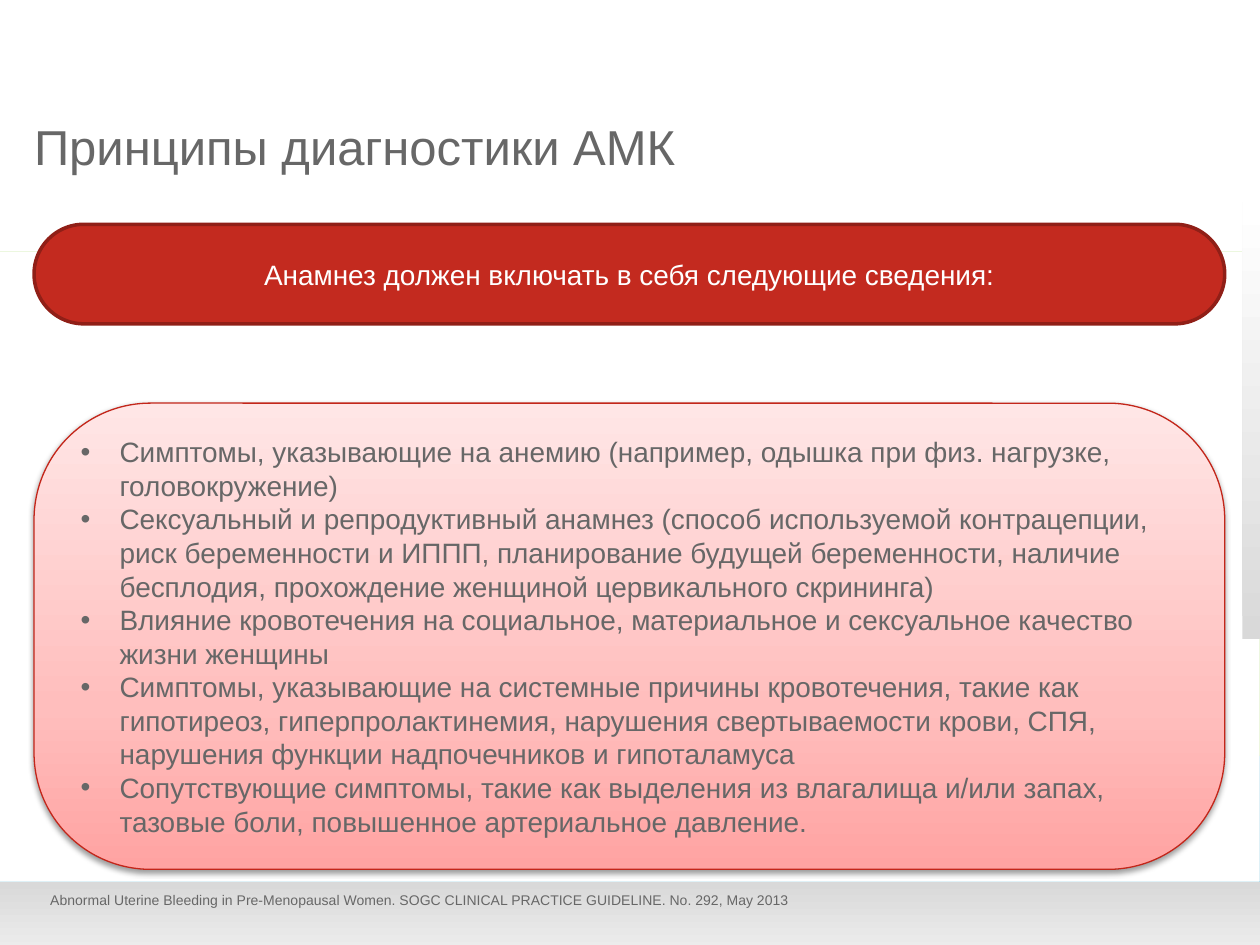
"""Build the slide on taking a history in abnormal uterine bleeding."""
import pptx
import pptx.util
import pptx.dml.color
import pptx.enum.shapes
import pptx.enum.text
import pptx.oxml
import pptx.oxml.ns
from lxml import etree

Inches, Pt = pptx.util.Inches, pptx.util.Pt
SHAPE = pptx.enum.shapes.MSO_SHAPE
ANCHOR = pptx.enum.text.MSO_ANCHOR
ALIGN = pptx.enum.text.PP_ALIGN
qn = pptx.oxml.ns.qn

TITLE = "Принципы диагностики АМК"
HEAD = "Анамнез должен включать в себя следующие сведения:"
ITEMS = [
    "Симптомы, указывающие на анемию (например, одышка при физ. нагрузке, головокружение)",
    "Сексуальный и репродуктивный анамнез (способ используемой контрацепции, риск беременности и ИППП, "
    "планирование будущей беременности, наличие бесплодия, прохождение женщиной цервикального скрининга)",
    "Влияние кровотечения на социальное, материальное и сексуальное качество жизни женщины",
    "Симптомы, указывающие на системные причины кровотечения, такие как гипотиреоз, гиперпролактинемия, "
    "нарушения свертываемости крови, СПЯ, нарушения функции надпочечников и гипоталамуса",
    "Сопутствующие симптомы, такие как выделения из влагалища и/или запах, тазовые боли, "
    "повышенное артериальное давление.",
]
SOURCE = ("Abnormal Uterine Bleeding in Pre-Menopausal Women. "
          "SOGC CLINICAL PRACTICE GUIDELINE. No. 292, May 2013")

GREY, WHITE, GREEN, BLUE = "676767", "FFFFFF", "6BC200", "0090C5"
SILVER = [(0, "D9D9D9"), (100, WHITE)]
PINK = [(0, "FFA3A2"), (35, "FFBEBD"), (100, "FFE6E6")]
UP, DOWN = 90, 270
LEFT, WIDE = 0.27, 9.45

BLUE_BAND = [(10, 5.83), (9.85, 5.83), (9.85, 7.01), (0, 7.01), (0, 7.02),
             (9.86, 7.02), (9.86, 6.6), (10, 6.6)]
FOOT_BAND = [(10, 7.5), (10, 6.6), (9.86, 6.6), (9.86, 7.02), (0, 7.02), (0, 7.5)]
GREEN_BAND = [(9.86, 5.07), (9.86, 1.6), (0, 1.6), (0, 1.61), (9.85, 1.61),
              (9.85, 5.84), (10, 5.84), (10, 5.07)]


def color(code):
    return pptx.dml.color.RGBColor.from_string(code)


def paint(shape, fill, angle=UP):
    shape.shadow.inherit = False
    if isinstance(fill, str):
        shape.fill.solid()
        shape.fill.fore_color.rgb = color(fill)
        return
    shape.fill.gradient()
    shape.fill.gradient_angle = angle
    stops = shape._element.spPr.find(".//" + qn("a:gsLst"))
    for stop in list(stops):
        stops.remove(stop)
    for place, code in fill:
        stop = etree.SubElement(stops, qn("a:gs"), pos=str(place * 1000))
        etree.SubElement(stop, qn("a:srgbClr"), val=code)


def edge(shape, code, width):
    shape.line.color.rgb = color(code)
    shape.line.width = Pt(width)


def band(shapes, points, fill, angle=UP):
    pen = shapes.build_freeform(*points[0], scale=Inches(1))
    pen.add_line_segments(points[1:], close=True)
    shape = pen.convert_to_shape()
    paint(shape, fill, angle)
    shape.line.fill.background()


def panel(shapes, kind, box, fill):
    shape = shapes.add_shape(kind, *map(Inches, box))
    paint(shape, fill)
    return shape


def write(para, text, size, code, align=ALIGN.LEFT):
    para.alignment = align
    run = para.add_run()
    run.text = text
    run.font.size, run.font.name = Pt(size), "Arial"
    run.font.color.rgb = color(code)


def bullet(para):
    props = para._p.get_or_add_pPr()
    props.set("marL", str(Inches(0.31)))
    props.set("indent", str(Inches(-0.31)))
    etree.SubElement(props, qn("a:buFont"), typeface="Arial")
    etree.SubElement(props, qn("a:buChar"), char="•")


def drop(shape):
    effects = shape._element.spPr.find(qn("a:effectLst"))
    shade = etree.SubElement(effects, qn("a:outerShdw"), blurRad=str(Pt(3.1)), dist=str(Pt(1.6)),
                             dir="5400000", rotWithShape="0")
    black = etree.SubElement(shade, qn("a:srgbClr"), val="000000")
    etree.SubElement(black, qn("a:alpha"), val="38000")


def main():
    deck = pptx.Presentation()
    deck.slide_width, deck.slide_height = Inches(10), Inches(7.5)
    slide = deck.slides.add_slide(deck.slide_layouts[5])
    shapes = slide.shapes

    band(shapes, BLUE_BAND, BLUE)
    band(shapes, FOOT_BAND, SILVER, DOWN)
    band(shapes, GREEN_BAND, GREEN)
    side = panel(shapes, SHAPE.RECTANGLE, (9.86, 1.6, 0.14, 3.47), SILVER)
    side.line.fill.background()

    title = shapes.title
    title.left, title.top, title.width, title.height = map(Inches, (LEFT, 0.6, 9, 0.79))
    frame = title.text_frame
    frame.margin_left = frame.margin_top = frame.margin_right = frame.margin_bottom = 0
    frame.vertical_anchor = ANCHOR.BOTTOM
    frame.auto_size = pptx.enum.text.MSO_AUTO_SIZE.NONE
    write(frame.paragraphs[0], TITLE, 28, GREY)

    head = panel(shapes, SHAPE.ROUNDED_RECTANGLE, (LEFT, 1.78, WIDE, 0.79), "C32A1F")
    head.adjustments[0] = 0.5
    edge(head, "901F17", 2)
    head.text_frame.vertical_anchor = ANCHOR.MIDDLE
    write(head.text_frame.paragraphs[0], HEAD, 16, WHITE, ALIGN.CENTER)

    body = panel(shapes, SHAPE.ROUNDED_RECTANGLE, (LEFT, 3.2, WIDE, 3.7), PINK)
    body.adjustments[0] = 0.25
    edge(body, "C3261A", 0.75)
    drop(body)
    frame = body.text_frame
    frame.vertical_anchor = ANCHOR.MIDDLE
    for i, item in enumerate(ITEMS):
        para = frame.add_paragraph() if i else frame.paragraphs[0]
        bullet(para)
        write(para, item, 16, GREY)

    note = shapes.add_textbox(*map(Inches, (0.3, 7.03, 6.99, 0.24))).text_frame
    note.word_wrap = True
    write(note.paragraphs[0], SOURCE, 8, GREY)

    deck.save("out.pptx")


if __name__ == "__main__":
    main()
